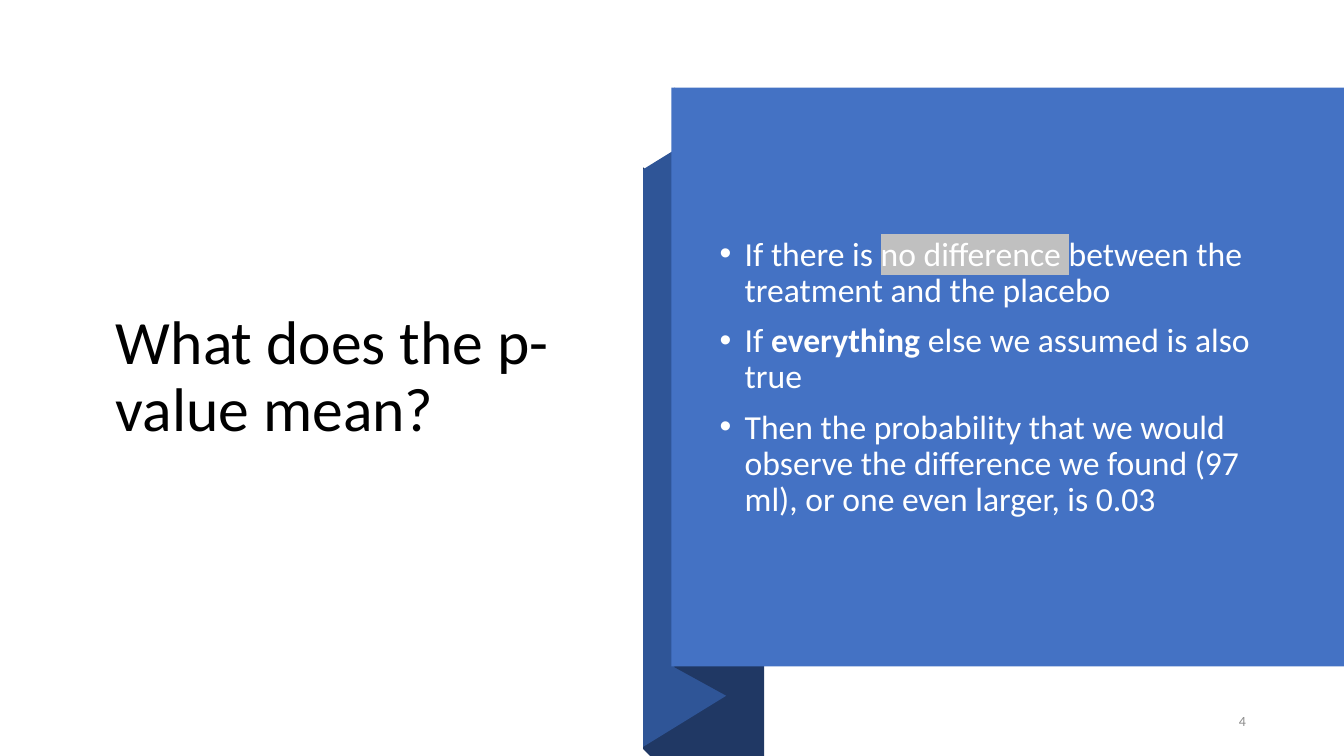
"""Build a slide that explains the meaning of a p-value."""
from lxml.etree import SubElement
from pptx import Presentation
from pptx.dml.color import RGBColor as Rgb
from pptx.enum.shapes import MSO_SHAPE as Kind
from pptx.enum.text import MSO_ANCHOR as Anchor, MSO_AUTO_SIZE as Fit, PP_ALIGN as Align
from pptx.oxml import parse_xml
from pptx.oxml.ns import nsdecls, qn
from pptx.util import Pt

HUES = {"black": "000000", "white": "FFFFFF", "grey": "8C8C8C", "mark": "C0C0C0",
        "blue": "4472C4", "mid": "2F5597", "dark": "203864"}


def paint(shape, hue):
    """Give a shape a flat fill without line or shadow."""
    shape.shadow.inherit = False
    shape.fill.solid()
    shape.fill.fore_color.rgb = Rgb.from_string(HUES[hue])
    shape.line.fill.background()


def style(font, size, hue, bold=False):
    """Set the font, size, weight and colour of text."""
    for name, value in {"name": "Calibri", "size": Pt(size), "bold": bold}.items():
        setattr(font, name, value)
    font.color.rgb = Rgb.from_string(HUES[hue])


deck = Presentation()
deck.slide_width, deck.slide_height = Pt(960), Pt(540)
slide = deck.slides.add_slide(deck.slide_layouts[5])
shapes = slide.shapes

title = shapes.title
place = {"left": 75.6, "top": 88.6, "width": 329.8, "height": 362.9}
for name, value in place.items():
    setattr(title, name, Pt(value))
frame = title.text_frame
frame.text = "What does the p-value mean?"
look = {"word_wrap": True, "auto_size": Fit.NONE, "vertical_anchor": Anchor.MIDDLE}
for name, value in look.items():
    setattr(frame, name, value)
para = frame.paragraphs[0]
para.alignment, para.line_spacing = Align.LEFT, 0.9
style(para.runs[0].font, 44, "black")

folds = [
    ("dark", [(459.4, 119.5), (545.8, 209.5), (545.8, 540), (464.4, 540), (459.4, 535)]),
    ("mid", [(459.4, 533.5), (519.1, 496.8), (519.1, 84.2), (459.4, 121)]),
    ("dark", [(481.7, 476.6), (519.8, 497.5), (519.8, 83.5), (481.7, 62.6)]),
]
for hue, spots in folds:
    points = [(Pt(x), Pt(y)) for x, y in spots]
    pen = shapes.build_freeform(*points[0])
    pen.add_line_segments(points[1:], close=True)
    paint(pen.convert_to_shape(), hue)

panel = shapes.add_shape(Kind.RECTANGLE, Pt(479.6), Pt(62.6), Pt(480.4), Pt(413.5))
paint(panel, "blue")

points = [
    [("If there is ", ""), ("no difference ", "mark"),
     ("between the treatment and the placebo", "")],
    [("If ", ""), ("everything", "bold"), (" else we assumed is also true", "")],
    [("Then the probability that we would observe the difference we found "
      "(97 ml), or one even larger, is 0.03", "")],
]
body = shapes.add_textbox(Pt(506.9), Pt(88.6), Pt(398.9), Pt(362.9)).text_frame
for name, value in look.items():
    setattr(body, name, value)
for i, parts in enumerate(points):
    para = body.add_paragraph() if i else body.paragraphs[0]
    para.line_spacing, para.space_before = 0.9, Pt(10 if i else 0)
    props = para._p.get_or_add_pPr()
    props.set("marL", str(Pt(18)))
    props.set("indent", str(Pt(-18)))
    SubElement(props, qn("a:buFont"), typeface="Arial")
    SubElement(props, qn("a:buChar"), char="•")
    for text, tone in parts:
        run = para.add_run()
        run.text = text
        style(run.font, 24, "white", tone == "bold")
        if tone == "mark":
            mark = parse_xml(f'<a:highlight {nsdecls("a")}>'
                             f'<a:srgbClr val="{HUES["mark"]}"/></a:highlight>')
            run._r.rPr.find(qn("a:solidFill")).addnext(mark)

number = shapes.add_textbox(Pt(843.1), Pt(502.6), Pt(54), Pt(25.2)).text_frame
for name, value in look.items():
    setattr(number, name, value)
para = number.paragraphs[0]
para.alignment, para.space_after = Align.RIGHT, Pt(6)
run = para.add_run()
run.text = "4"
style(run.font, 10, "grey")

deck.save("out.pptx")
